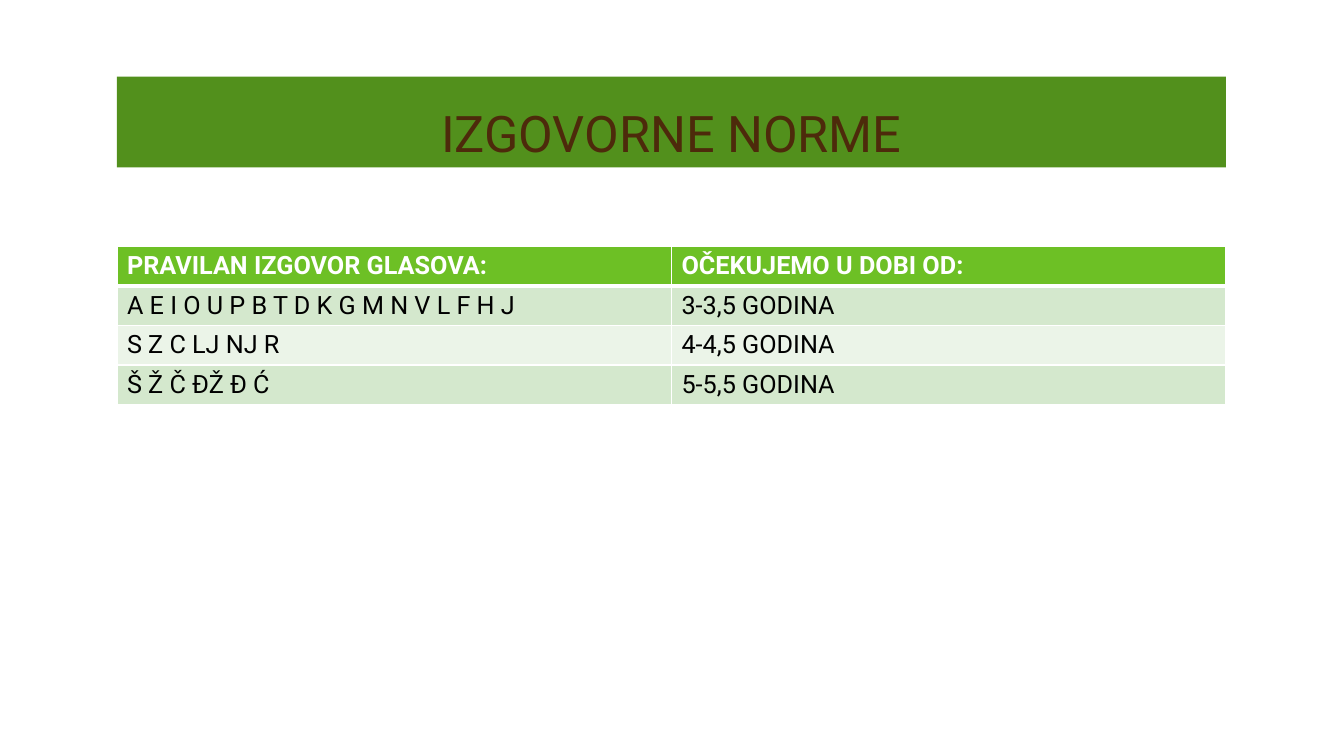
from pptx import Presentation
from pptx.dml.color import RGBColor
from pptx.enum.text import MSO_ANCHOR, MSO_AUTO_SIZE, PP_ALIGN
from pptx.oxml.ns import qn
from pptx.util import Inches, Pt
from lxml.etree import SubElement

FONT = "Roboto"
LEFT, WIDTH = Inches(1.16), Inches(11)
ROW_HEIGHT = Inches(0.39)
HEADER_FILL = "6DC025"
BAND_FILLS = ["D4E8CD", "EBF4E8"]
NORMS = [
    ("PRAVILAN IZGOVOR GLASOVA:", "OČEKUJEMO U DOBI OD:"),
    ("A E I O U P B T D K G M N V L F H J", "3-3,5 GODINA"),
    ("S Z C LJ NJ R", "4-4,5 GODINA"),
    ("Š Ž Č ĐŽ Đ Ć", "5-5,5 GODINA"),
]


def paint(color_format, hex_color):
    color_format.rgb = RGBColor.from_string(hex_color)


def add_border(cell, side, points):
    """Draw a white line on one side (L, R, T or B) of a table cell."""
    line = SubElement(cell._tc.get_or_add_tcPr(), qn(f"a:ln{side}"), w=str(Pt(points)))
    SubElement(SubElement(line, qn("a:solidFill")), qn("a:srgbClr"), val="FFFFFF")


prs = Presentation()
prs.slide_width, prs.slide_height = Inches(13.33), Inches(7.5)
slide = prs.slides.add_slide(prs.slide_layouts[5])

# Title band
title = slide.shapes.title
title.left, title.top, title.width, title.height = LEFT, Inches(0.76), WIDTH, Inches(0.9)
title.fill.solid()
paint(title.fill.fore_color, "52901C")
heading = title.text_frame
heading.text = "IZGOVORNE NORME"
heading.auto_size = MSO_AUTO_SIZE.NONE
heading.vertical_anchor = MSO_ANCHOR.BOTTOM
heading.paragraphs[0].alignment = PP_ALIGN.CENTER
heading_font = heading.paragraphs[0].runs[0].font
heading_font.name, heading_font.size = FONT, Pt(36)
paint(heading_font.color, "4D2A0B")

# Table of sounds and expected ages
norms = slide.shapes.add_table(
    len(NORMS), 2, LEFT, Inches(2.44), WIDTH, ROW_HEIGHT * len(NORMS)
).table
for r, row in enumerate(NORMS):
    is_header = r == 0
    for c, words in enumerate(row):
        cell = norms.cell(r, c)
        cell.text = words
        font = cell.text_frame.paragraphs[0].runs[0].font
        for attribute, value in {"name": FONT, "size": Pt(18), "bold": is_header}.items():
            setattr(font, attribute, value)
        paint(font.color, "FFFFFF" if is_header else "000000")
        borders = {"L": 1, "R": 1, "T": 3 if r == 1 else 1, "B": 3 if is_header else 1}
        for side, points in borders.items():
            add_border(cell, side, points)
        cell.fill.solid()
        paint(cell.fill.fore_color, HEADER_FILL if is_header else BAND_FILLS[(r - 1) % 2])

prs.save("out.pptx")
